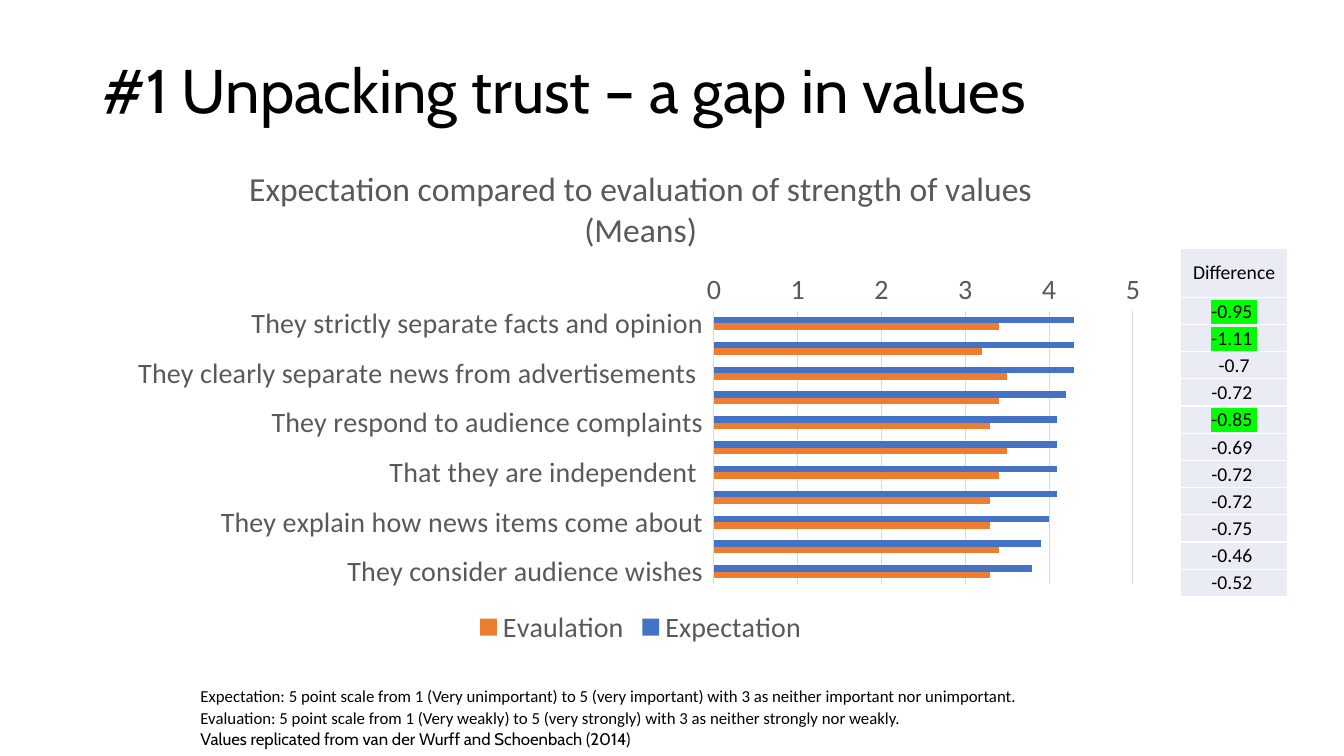
from lxml import etree
from pptx import Presentation
from pptx import util as u
from pptx.chart.data import CategoryChartData
from pptx.dml.color import RGBColor
from pptx.enum import chart as ch, text as tx
from pptx.oxml import parse_xml
from pptx.oxml.ns import qn, nsdecls

WIDE, HIGH = u.Inches(13.33), u.Inches(7.5)
BLACK = RGBColor(0, 0, 0)
WHITE = RGBColor(0xFF, 0xFF, 0xFF)
GREY = RGBColor(0x59, 0x59, 0x59)
PALE = RGBColor(0xD9, 0xD9, 0xD9)
BLUE = RGBColor(0x44, 0x72, 0xC4)
ORANGE = RGBColor(0xED, 0x7D, 0x31)
TINT = RGBColor(0xE9, 0xEB, 0xF5)
LIME = RGBColor(0, 0xFF, 0)
SANS, HEAD = "Calibri", "Cabin"

# Statement, expectation, evaluation, difference
ROWS = [
    ("They strictly separate facts and opinion ", 4.3, 3.4, "-0.95 "),
    ("They openly admit mistakes to audiences ", 4.3, 3.2, "-1.11 "),
    ("They clearly separate news from advertisements  ", 4.3, 3.5, "-0.7"),
    ("They report different views in society as fully as possible ",
     4.2, 3.4, "-0.72 "),
    ("They respond to audience complaints ", 4.1, 3.3, "-0.85 "),
    ("They show empathy with ordinary people  ", 4.1, 3.5, "-0.69 "),
    ("That they are independent  ", 4.1, 3.4, "-0.72 "),
    ("They clearly indicate journalistic principles  ", 4.1, 3.3, "-0.72 "),
    ("They explain how news items come about ", 4, 3.3, "-0.75 "),
    ("They bond with viewers, readers, and listeners ", 3.9, 3.4, "-0.46 "),
    ("They consider audience wishes ", 3.8, 3.3, "-0.52 "),
]
MARKED = {0, 1, 4}
NOTES = [
    ("Expectation: 5 point scale from 1 (Very unimportant) to 5 (very "
     "important) with 3 as neither important nor unimportant.", SANS),
    ("Evaluation: 5 point scale from 1 (Very weakly) to 5 (very strongly) "
     "with 3 as neither strongly nor weakly.", SANS),
    ("Values replicated from van der Wurff and Schoenbach (2014)", HEAD),
]


def area(left, top, width, height):
    """Turn percentages of the slide into lengths."""
    return [int(side * share / 100) for side, share in
            zip((WIDE, HIGH, WIDE, HIGH), (left, top, width, height))]


def style(font, size, color, name=SANS):
    font.size, font.name, font.bold = u.Pt(size), name, False
    font.color.rgb = color


def add_run(par, words, size, name=SANS):
    run = par.add_run()
    run.text = words
    style(run.font, size, BLACK, name)
    return run


def mark(run):
    """Highlight the run."""
    glow = parse_xml(f'<a:highlight {nsdecls("a")}>'
                     f'<a:srgbClr val="{LIME}"/></a:highlight>')
    run.font._element.find(qn("a:latin")).addprevious(glow)


def add_title(slide, words):
    title = slide.shapes.title
    title.left, title.top, title.width, title.height = area(
        6.9, 2.67, 86.27, 19.33)
    frame = title.text_frame
    frame.vertical_anchor = tx.MSO_ANCHOR.MIDDLE
    par = frame.paragraphs[0]
    par.alignment, par.line_spacing = tx.PP_ALIGN.LEFT, 0.9
    add_run(par, words, 44, HEAD)


def set_axis(axis):
    axis.major_tick_mark = axis.minor_tick_mark = ch.XL_TICK_MARK.NONE
    style(axis.tick_labels.font, 20, GREY)
    axis._element.find(qn("c:txPr")).find(qn("a:bodyPr")).set(
        "rot", "-60000000")


def place_plot(chart, **shares):
    """Fix the inner plot area as shares of the chart."""
    plot = chart._chartSpace.chart.plotArea
    for old in plot.findall(qn("c:layout")):
        plot.remove(old)
    layout = etree.Element(qn("c:layout"))
    manual = etree.SubElement(layout, qn("c:manualLayout"))
    parts = dict(layoutTarget="inner", xMode="edge", yMode="edge", **shares)
    for key, val in parts.items():
        etree.SubElement(manual, qn(f"c:{key}")).set("val", str(val))
    plot.insert(0, layout)


def add_bars(slide):
    data = CategoryChartData()
    names, hopes, views, _ = zip(*ROWS)
    data.categories = names
    data.add_series("Expectation", hopes)
    data.add_series("Evaulation", views)
    chart = slide.shapes.add_chart(
        ch.XL_CHART_TYPE.BAR_CLUSTERED, *area(8.7, 19.07, 77.94, 66.93),
        data).chart
    style(chart.font, 20, BLACK)

    chart.has_title = True
    par = chart.chart_title.text_frame.paragraphs[0]
    run = add_run(par, "Expectation compared to evaluation of strength "
                       "of values (Means)", 24)
    run.font.color.rgb = GREY
    chart.chart_title.include_in_layout = False

    chart.has_legend = True
    chart.legend.position = ch.XL_LEGEND_POSITION.BOTTOM
    chart.legend.include_in_layout = False
    style(chart.legend.font, 20, GREY)

    plot = chart.plots[0]
    plot.gap_width, plot.overlap, plot.vary_by_categories = 182, 0, False
    for series, color in zip(plot.series, (BLUE, ORANGE)):
        series.format.fill.solid()
        series.format.fill.fore_color.rgb = color

    cats, vals = chart.category_axis, chart.value_axis
    set_axis(cats)
    set_axis(vals)
    cats.reverse_order = True
    vals.minimum_scale, vals.maximum_scale, vals.major_unit = 0, 5, 1
    vals.format.line.fill.background()
    vals.has_major_gridlines = True
    for line in (cats.format.line, vals.major_gridlines.format.line):
        line.color.rgb, line.width = PALE, u.Pt(0.75)
    place_plot(chart, x=0.57, y=0.33, w=0.4, h=0.54)


def edge(cell):
    """Draw white borders round the cell."""
    for side in "LRTB":
        cell._tc.get_or_add_tcPr().append(parse_xml(
            f'<a:ln{side} {nsdecls("a")} w="{u.Pt(1)}"><a:solidFill>'
            f'<a:srgbClr val="{WHITE}"/></a:solidFill></a:ln{side}>'))


def fill_cell(cell, words, lit):
    edge(cell)
    cell.fill.solid()
    cell.fill.fore_color.rgb = TINT
    cell.vertical_anchor = tx.MSO_ANCHOR.MIDDLE
    cell.margin_left = cell.margin_right = cell.margin_top = u.Inches(0.01)
    cell.margin_bottom = 0
    par = cell.text_frame.paragraphs[0]
    par.alignment = tx.PP_ALIGN.CENTER
    run = add_run(par, words, 14)
    if lit:
        mark(run)


def add_gaps(slide):
    """Add the column of differences beside the bars."""
    table = slide.shapes.add_table(
        len(ROWS) + 1, 1, *area(87.85, 32.8, 7.95, 46.27)).table
    table.first_row = table.horz_banding = False
    for row in table.rows:
        row.height = u.Inches(0.27)
    table.rows[0].height = u.Inches(0.49)
    fill_cell(table.cell(0, 0), "Difference", False)
    for num, row in enumerate(ROWS):
        fill_cell(table.cell(num + 1, 0), row[-1], num in MARKED)


def add_notes(slide):
    frame = slide.shapes.add_textbox(
        *area(14.18, 89.87, 80.95, 12.8)).text_frame
    frame.word_wrap = True
    frame.auto_size = tx.MSO_AUTO_SIZE.SHAPE_TO_FIT_TEXT
    for num, (words, name) in enumerate(NOTES):
        par = frame.add_paragraph() if num else frame.paragraphs[0]
        par.line_spacing = 1.07
        add_run(par, words, 12, name)


def main():
    deck = Presentation()
    deck.slide_width, deck.slide_height = WIDE, HIGH
    slide = deck.slides.add_slide(deck.slide_layouts[5])
    add_title(slide, "#1 Unpacking trust – a gap in values")
    add_bars(slide)
    add_gaps(slide)
    add_notes(slide)
    deck.save("out.pptx")


if __name__ == "__main__":
    main()
